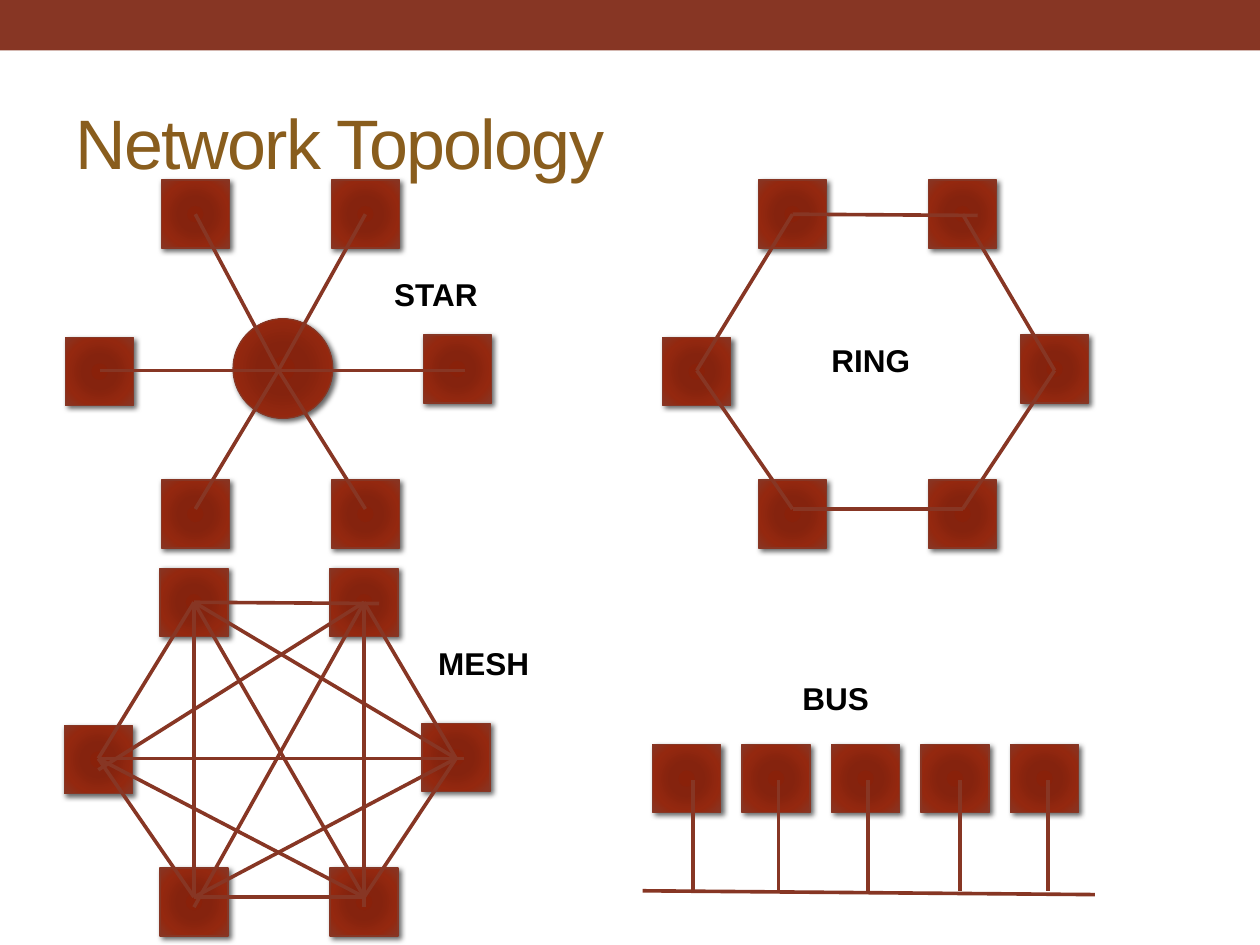
from lxml import etree
from pptx import Presentation
from pptx.dml.color import RGBColor
from pptx.enum.shapes import MSO_CONNECTOR, MSO_SHAPE
from pptx.enum.text import MSO_ANCHOR
from pptx.oxml import parse_xml
from pptx.oxml.ns import qn
from pptx.util import Inches, Pt

# Content: labels as text, left, top, width
TITLE = "Network Topology"
LABELS = [
    ("STAR", 3.03, 2.13, 0.88),
    ("RING", 6.5, 2.66, 0.83),
    ("MESH", 3.38, 5.06, 0.93),
    ("BUS", 6.27, 5.34, 0.73),
]

# Six-node layout, measured from each network's origin
NODE_OFFSETS = [(0.76, 0), (2.11, 0), (0, 1.25), (0.76, 2.38), (2.84, 1.23), (2.11, 2.38)]
JOINTS = {
    "top left": (1.03, 0.27), "top right": (2.38, 0.27), "top end": (2.5, 0.28),
    "left": (0.27, 1.51), "left low": (0.27, 1.6),
    "right": (3.11, 1.51), "right end": (3.17, 1.51),
    "bottom left": (1.03, 2.61), "bottom left low": (1.03, 2.69),
    "bottom right": (2.38, 2.61), "bottom right low": (2.38, 2.69),
    "hub": (1.69, 1.51),
}
STAR_LINKS = [(end, "hub") for end in
              ("top left", "top right", "right end", "bottom right", "bottom left", "left")]
RING_LINKS = [
    ("top left", "left"), ("top right", "right"), ("top end", "top left"),
    ("bottom right", "right"), ("bottom left", "bottom right"), ("bottom left", "left"),
]
CROSS_LINKS = [
    ("bottom right", "top left"), ("bottom left low", "top right"), ("right", "top left"),
    ("bottom left", "top left"), ("left low", "top right"), ("left", "right end"),
    ("bottom right low", "top right"), ("bottom left", "right"), ("bottom right", "left"),
]
NETWORKS = [
    ((0.52, 1.43), STAR_LINKS),
    ((5.26, 1.43), RING_LINKS),
    ((0.51, 4.51), RING_LINKS + CROSS_LINKS),
]
HUB = (1.85, 2.53, 0.79)

# Bus: backbone ends, first node, node pitch, drop positions
BACKBONE = ((5.1, 7.07), (8.69, 7.1))
BUS_START, BUS_PITCH = (5.18, 5.91), 0.71
BUS_DROPS = [5.5, 6.18, 6.89, 7.62, 8.32]
DROP_TOP, DROP_BOTTOM = 6.19, 7.07

NODE_SIZE = 0.54
THEME = {
    "font": "Arial", "accent": "873624", "title": "895D1D", "label": "000000",
    "title_size": 40, "label_size": 18, "link_width": 2.08, "outline_width": 0.75,
    "gradient": [(0, "89210A"), (34, "85230E"), (70, "94280F"), (100, "873624")],
}
A = 'xmlns:a="http://schemas.openxmlformats.org/drawingml/2006/main"'
STOPS = "".join(f'<a:gs pos="{pos * 1000}"><a:srgbClr val="{color}"/></a:gs>'
                for pos, color in THEME["gradient"])
GRADIENT = (f'<a:gradFill {A} rotWithShape="1"><a:gsLst>{STOPS}</a:gsLst><a:path path="circle">'
            '<a:fillToRect l="100000" t="100000" r="100000" b="100000"/></a:path></a:gradFill>')
SHADOW = (f'<a:outerShdw {A} blurRad="{Pt(3)}" dist="{Pt(2)}" dir="2700000" rotWithShape="0">'
          '<a:srgbClr val="000000"><a:alpha val="60000"/></a:srgbClr></a:outerShdw>')

prs = Presentation()
prs.slide_width, prs.slide_height = Inches(10), Inches(7.5)
slide = prs.slides.add_slide(prs.slide_layouts[6])
shapes = slide.shapes


def rgb(name):
    return RGBColor.from_string(THEME[name])


def add_text(text, left, top, width, height, *, size, color, bold=False, wrap=False,
             anchor=MSO_ANCHOR.TOP, spacing=None):
    box = shapes.add_textbox(Inches(left), Inches(top), Inches(width), Inches(height))
    frame = box.text_frame
    frame.word_wrap, frame.vertical_anchor = wrap, anchor
    run = frame.paragraphs[0].add_run()
    run.text = text
    run.font.name, run.font.size, run.font.bold = THEME["font"], Pt(THEME[size]), bold
    run.font.color.rgb = rgb(color)
    if spacing is not None:
        run.font._element.set("spc", str(spacing * 100))


def add_node(left, top, size=NODE_SIZE, kind=MSO_SHAPE.RECTANGLE):
    node = shapes.add_shape(kind, Inches(left), Inches(top), Inches(size), Inches(size))
    node.fill.solid()
    node.line.color.rgb, node.line.width = rgb("accent"), Pt(THEME["outline_width"])
    node.shadow.inherit = False
    properties = node._element.spPr
    properties.replace(properties.find(qn("a:solidFill")), parse_xml(GRADIENT))
    properties.find(qn("a:effectLst")).append(parse_xml(SHADOW))


def add_link(start, end):
    link = shapes.add_connector(MSO_CONNECTOR.STRAIGHT, *map(Inches, (*start, *end)))
    link.line.color.rgb, link.line.width = rgb("accent"), Pt(THEME["link_width"])
    etree.SubElement(link._element.spPr, qn("a:effectLst"))


def shift(origin, offset):
    return origin[0] + offset[0], origin[1] + offset[1]


# Top band and title
band = shapes.add_shape(MSO_SHAPE.RECTANGLE, 0, 0, prs.slide_width, Inches(0.4))
band.fill.solid()
band.fill.fore_color.rgb = rgb("accent")
band.line.fill.background()
band.shadow.inherit = False
add_text(TITLE, 0.5, 0.58, 9, 1.08, size="title_size", color="title", wrap=True,
         anchor=MSO_ANCHOR.MIDDLE, spacing=-1)

# Star, ring and mesh
add_node(*HUB, kind=MSO_SHAPE.OVAL)
for origin, links in NETWORKS:
    for offset in NODE_OFFSETS:
        add_node(*shift(origin, offset))
    for start, end in links:
        add_link(shift(origin, JOINTS[start]), shift(origin, JOINTS[end]))

# Bus
add_link(*BACKBONE)
for index in range(len(BUS_DROPS)):
    add_node(*shift(BUS_START, (index * BUS_PITCH, 0)))
for x in BUS_DROPS:
    add_link((x, DROP_TOP), (x, DROP_BOTTOM))

# Labels
for label, left, top, width in LABELS:
    add_text(label, left, top, width, 0.4, size="label_size", color="label", bold=True)

prs.save("out.pptx")
